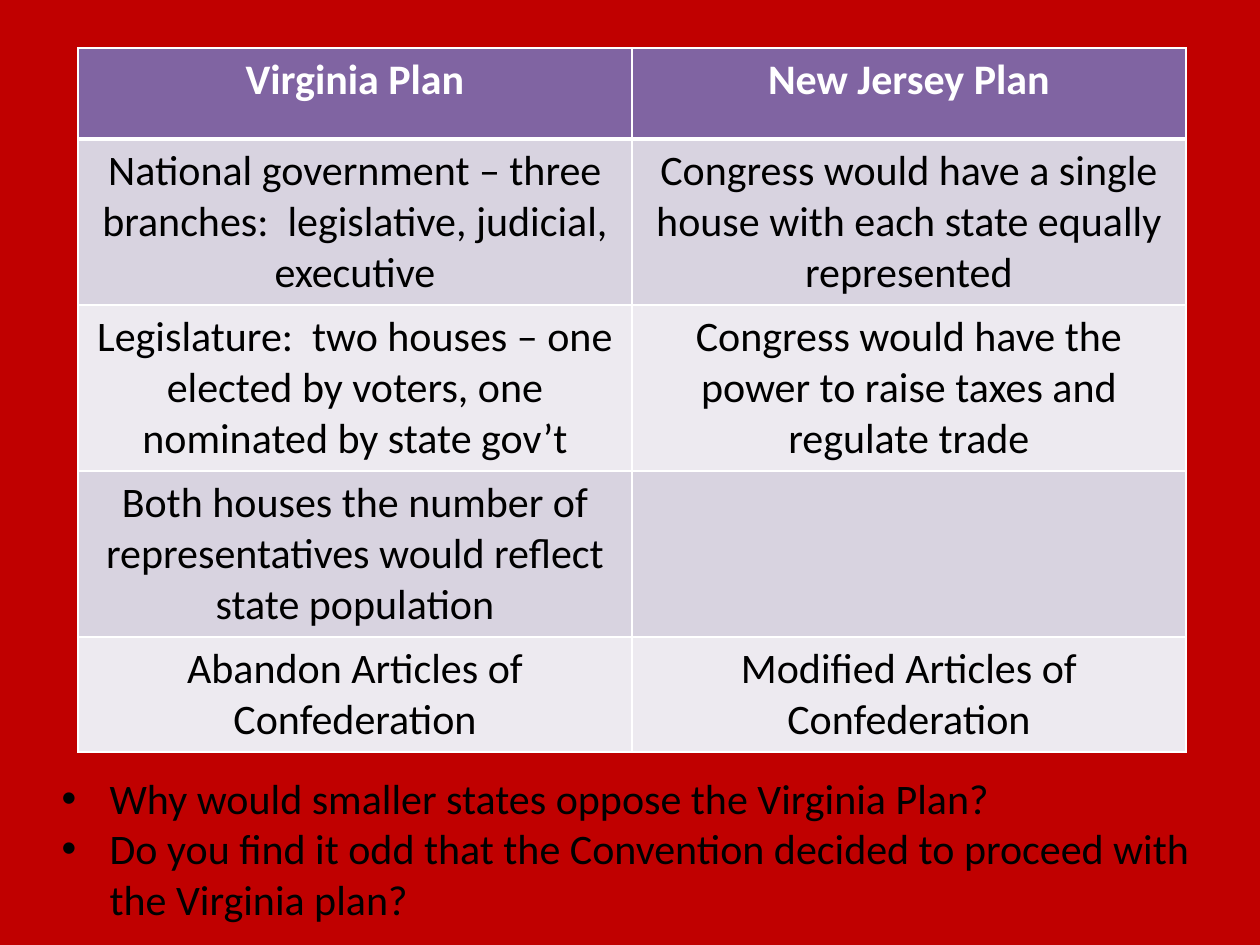
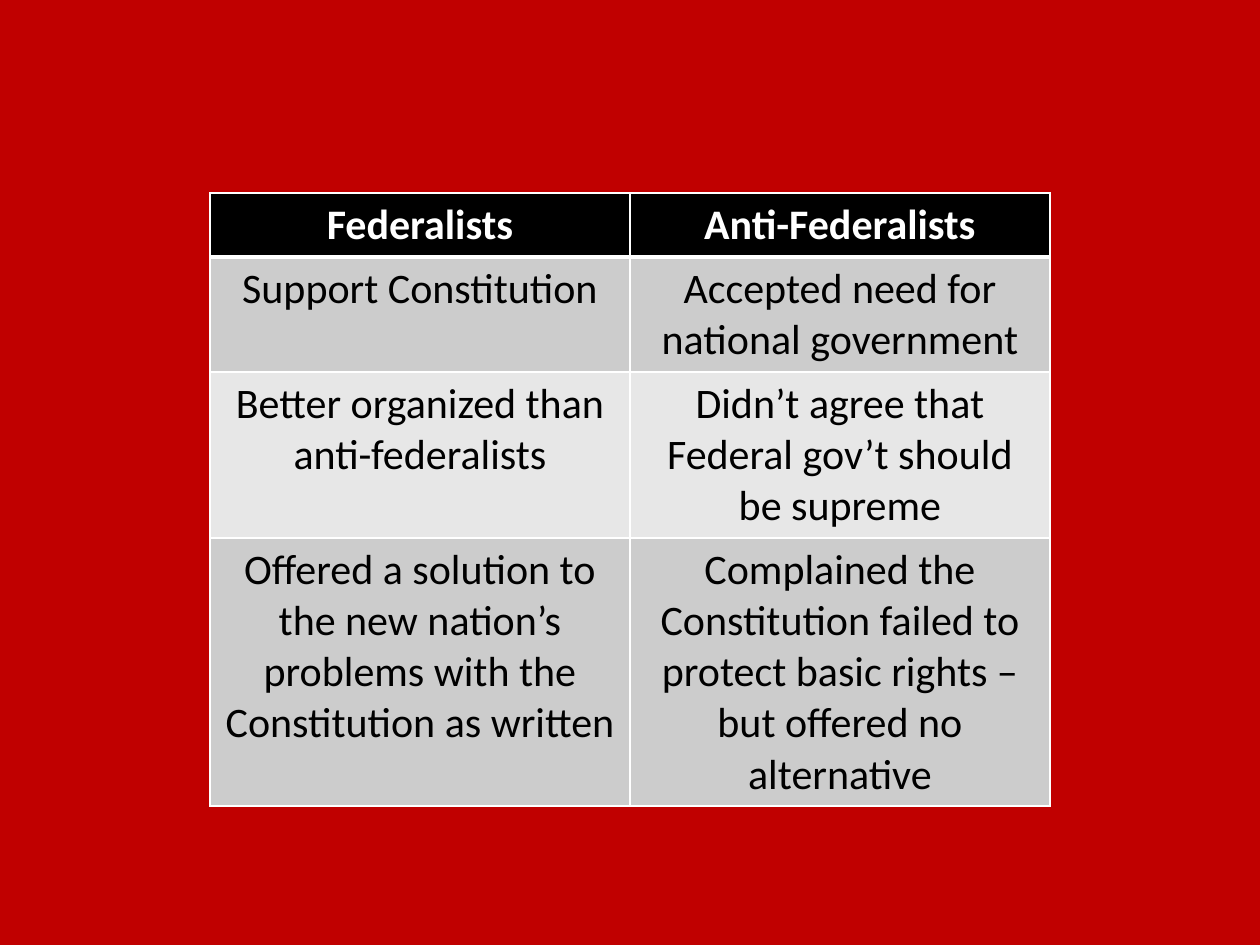
from dataclasses import dataclass

from lxml import etree
from pptx import Presentation
from pptx import util as u
from pptx.dml.color import RGBColor
from pptx.enum import text
from pptx.oxml import ns

PX = u.Inches(1) / 126


@dataclass(frozen=True)
class Theme:
    background: str = "C00000"
    light: str = "FFFFFF"
    dark: str = "000000"
    font: str = "Calibri"
    size: int = 24
    rule: int = 1
    header_rule: int = 3


@dataclass(frozen=True)
class Comparison:
    left: int
    top: int
    column_width: int
    row_heights: tuple[int, ...]
    header_fill: str
    band_fills: tuple[str, str]
    rows: tuple[tuple[str, str], ...]


THEME = Theme()

PLANS = Comparison(
    78, 48, 554, (91, 166, 166, 166, 115), "8064A2", ("D8D3E0", "EDEAF0"),
    (
        ("Virginia Plan", "New Jersey Plan"),
        ("National government – three branches:  legislative, judicial, executive",
         "Congress would have a single house with each state equally represented"),
        ("Legislature:  two houses – one elected by voters, one nominated by state gov’t",
         "Congress would have the power to raise taxes and regulate trade"),
        ("Both houses the number of representatives would reflect state population", ""),
        ("Abandon Articles of Confederation", "Modified Articles of Confederation"),
    ),
)

FACTIONS = Comparison(
    210, 193, 420, (64, 115, 166, 268), "000000", ("CCCCCC", "E7E7E7"),
    (
        ("Federalists", "Anti-Federalists"),
        ("Support Constitution", "Accepted need for national government"),
        ("Better organized than anti-federalists",
         "Didn’t agree that Federal gov’t should be supreme"),
        ("Offered a solution to the new nation’s problems with the Constitution as written",
         "Complained the Constitution failed to protect basic rights – but offered no alternative"),
    ),
)

QUESTIONS = (
    "Why would smaller states oppose the Virginia Plan?",
    "Do you find it odd that the Convention decided to proceed with the Virginia plan?",
)


def px(length: int) -> u.Emu:
    return u.Emu(round(length * PX))


def add_run(paragraph, words: str, color: str, bold: bool = False) -> None:
    run = paragraph.add_run()
    run.text = words
    run.font.name = THEME.font
    run.font.size = u.Pt(THEME.size)
    run.font.bold = bold
    run.font.color.rgb = RGBColor.from_string(color)


def set_borders(cell, top: int, bottom: int) -> None:
    properties = cell._tc.get_or_add_tcPr()
    widths = {"L": THEME.rule, "R": THEME.rule, "T": top, "B": bottom}
    for position, (side, width) in enumerate(widths.items()):
        line = etree.Element(ns.qn(f"a:ln{side}"), w=str(u.Pt(width)))
        fill = etree.SubElement(line, ns.qn("a:solidFill"))
        etree.SubElement(fill, ns.qn("a:srgbClr"), val=THEME.light)
        properties.insert(position, line)


def add_comparison(slide, comparison: Comparison) -> None:
    columns = len(comparison.rows[0])
    table = slide.shapes.add_table(
        len(comparison.rows), columns, px(comparison.left), px(comparison.top),
        px(columns * comparison.column_width), px(sum(comparison.row_heights)),
    ).table
    table.horz_banding = False
    for column in table.columns:
        column.width = px(comparison.column_width)
    for index, words in enumerate(comparison.rows):
        header = index == 0
        table.rows[index].height = px(comparison.row_heights[index])
        fill = comparison.header_fill if header else comparison.band_fills[(index - 1) % 2]
        for cell, label in zip(table.rows[index].cells, words):
            cell.fill.solid()
            cell.fill.fore_color.rgb = RGBColor.from_string(fill)
            set_borders(
                cell,
                top=THEME.header_rule if index == 1 else THEME.rule,
                bottom=THEME.header_rule if header else THEME.rule,
            )
            if label:
                paragraph = cell.text_frame.paragraphs[0]
                paragraph.alignment = text.PP_ALIGN.CENTER
                add_run(paragraph, label, THEME.light if header else THEME.dark, header)


def fill_questions(body, questions: tuple[str, ...]) -> None:
    body.left, body.top, body.width, body.height = map(px, (49, 766, 1168, 165))
    frame = body.text_frame
    frame.word_wrap = True
    frame.auto_size = text.MSO_AUTO_SIZE.SHAPE_TO_FIT_TEXT
    for index, question in enumerate(questions):
        paragraph = frame.add_paragraph() if index else frame.paragraphs[0]
        properties = paragraph._p.get_or_add_pPr()
        properties.set("marL", str(px(48)))
        properties.set("indent", str(px(-48)))
        etree.SubElement(properties, ns.qn("a:buFont"), typeface="Arial")
        etree.SubElement(properties, ns.qn("a:buChar"), char="•")
        paragraph.space_before = u.Pt(0)
        add_run(paragraph, question, THEME.dark)


def add_slide(presentation, layout: int):
    slide = presentation.slides.add_slide(presentation.slide_layouts[layout])
    slide.background.fill.solid()
    slide.background.fill.fore_color.rgb = RGBColor.from_string(THEME.background)
    return slide


def main() -> None:
    presentation = Presentation()
    presentation.slide_width, presentation.slide_height = px(1260), px(945)

    plans_slide = add_slide(presentation, 1)
    title = plans_slide.shapes.title.element
    title.getparent().remove(title)
    add_comparison(plans_slide, PLANS)
    fill_questions(plans_slide.placeholders[1], QUESTIONS)

    factions_slide = add_slide(presentation, 6)
    add_comparison(factions_slide, FACTIONS)

    presentation.save("out.pptx")


if __name__ == "__main__":
    main()
